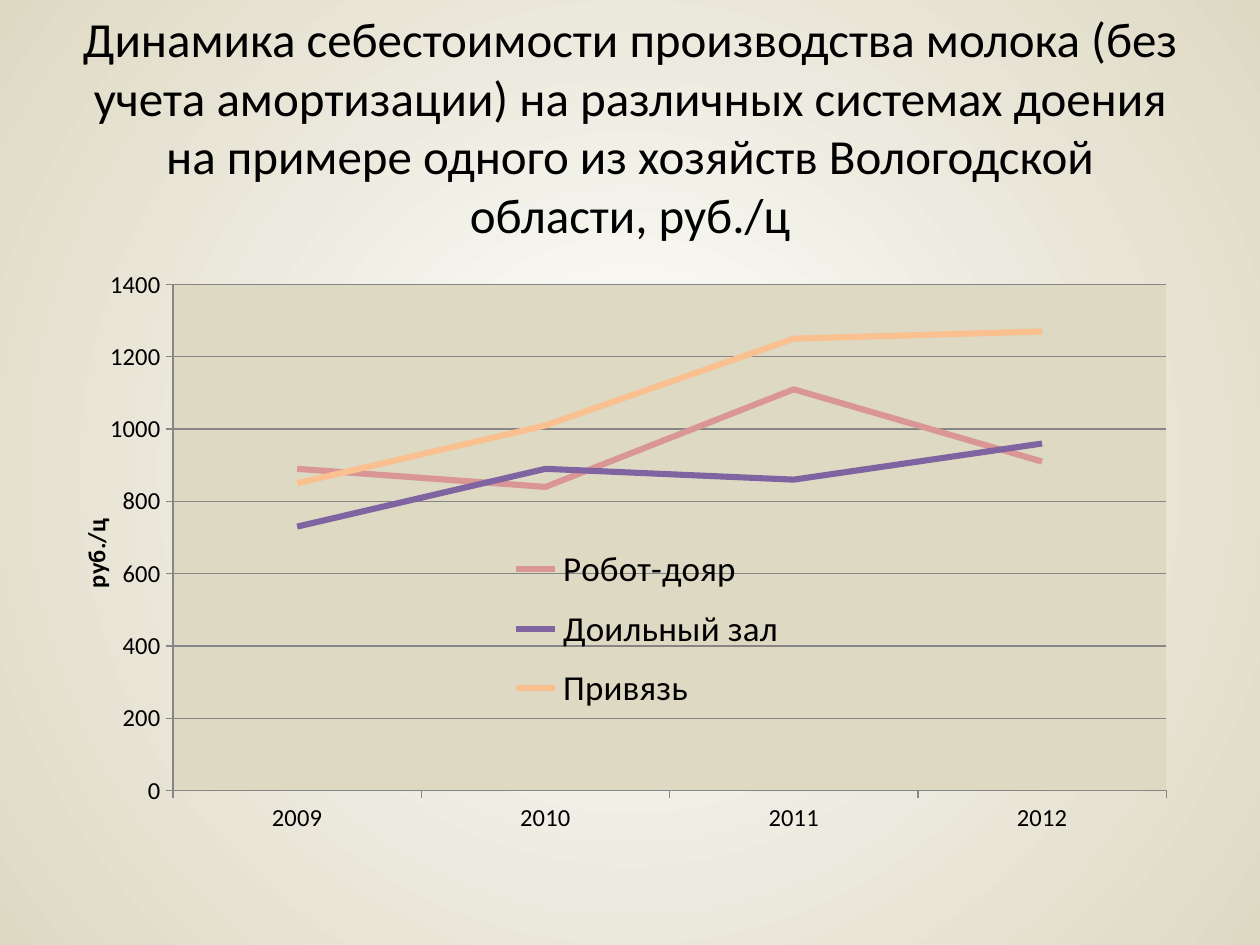
import pptx
import pptx.chart.data
import pptx.dml.color
import pptx.enum.chart
import pptx.enum.text
import pptx.oxml
import pptx.oxml.ns
import pptx.util

Cm, Pt = pptx.util.Cm, pptx.util.Pt
FONT = "Calibri"
HUES = {
    "text": "000000",
    "sand": "DDD9C3",
    "white": "FFFFFF",
    "grid": "868686",
    "robot": "D99694",
    "hall": "8064A2",
    "tied": "FAC090",
}
TITLE = (
    "Динамика себестоимости производства молока (без учета амортизации) "
    "на различных системах доения на примере одного из хозяйств "
    "Вологодской области, руб./ц"
)
YEARS = ["2009", "2010", "2011", "2012"]
COSTS = [
    ("Робот-дояр", "robot", [890, 840, 1110, 910]),
    ("Доильный зал", "hall", [730, 890, 860, 960]),
    ("Привязь", "tied", [850, 1010, 1250, 1270]),
]


def rgb(key):
    return pptx.dml.color.RGBColor.from_string(HUES[key])


def style(font, size, bold=False):
    font.name, font.size, font.bold = FONT, Pt(size), bold
    font.color.rgb = rgb("text")


def parse_xml(tag, body):
    return pptx.oxml.parse_xml(
        f'<{tag} {pptx.oxml.ns.nsdecls("a", "c")}>{body}</{tag}>')


def paint_back(slide):
    fill = slide.background.fill
    fill.gradient()
    for stop, key in zip(fill.gradient_stops, ("white", "sand")):
        stop.color.rgb = rgb(key)
    fill.gradient_stops[0].position = 0
    fill.gradient_stops[1].position = 1
    # Turn the linear gradient into a round one
    lin = slide.element.xpath("p:cSld/p:bg//a:lin")[0]
    rect = '<a:fillToRect l="50000" t="50000" r="50000" b="50000"/>'
    lin.getparent().replace(lin, parse_xml("a:path", rect))
    slide.element.xpath("p:cSld/p:bg//a:path")[0].set("path", "circle")


def add_title(slide):
    box = slide.shapes.add_textbox(Cm(1.27), Cm(0.76), Cm(22.86), Cm(4.57))
    frame = box.text_frame
    frame.word_wrap = True
    frame.vertical_anchor = pptx.enum.text.MSO_ANCHOR.MIDDLE
    frame.margin_bottom = Cm(1.14)
    para = frame.paragraphs[0]
    para.alignment = pptx.enum.text.PP_ALIGN.CENTER
    run = para.add_run()
    run.text = TITLE
    style(run.font, 28)


def place(node, index, inner=False, **spots):
    """Give a chart part a fixed place, in fractions of the chart."""
    for old in node.xpath("c:layout"):
        node.remove(old)
    body = '<c:layoutTarget val="inner"/>' if inner else ""
    body += '<c:xMode val="edge"/><c:yMode val="edge"/>'
    body += "".join(f'<c:{key} val="{val}"/>' for key, val in spots.items())
    layout = f"<c:manualLayout>{body}</c:manualLayout>"
    node.insert(index, parse_xml("c:layout", layout))


def set_axis(axis):
    style(axis.tick_labels.font, 14)
    axis.major_tick_mark = pptx.enum.chart.XL_TICK_MARK.OUTSIDE
    axis.format.line.color.rgb = rgb("grid")
    axis.format.line.width = Pt(0.75)


def set_scale(axis):
    axis.minimum_scale, axis.maximum_scale, axis.major_unit = 0, 1400, 200
    axis.tick_labels.number_format = "0"
    axis.tick_labels.number_format_is_linked = False
    axis.has_major_gridlines = True
    grid = axis.major_gridlines.format.line
    grid.color.rgb, grid.width = rgb("grid"), Pt(0.75)
    run = axis.axis_title.text_frame.paragraphs[0].add_run()
    run.text = "руб./ц"
    style(run.font, 14, True)


def add_chart(slide):
    data = pptx.chart.data.CategoryChartData(number_format="0")
    data.categories = YEARS
    for name, _, vals in COSTS:
        data.add_series(name, vals)
    chart = slide.shapes.add_chart(
        pptx.enum.chart.XL_CHART_TYPE.LINE,
        Cm(1.27), Cm(5.13), Cm(22.86), Cm(11.89), data).chart
    chart.has_title = False
    style(chart.font, 10)

    # Lines
    plot = chart.plots[0]
    plot.vary_by_categories = False
    for line, (_, key, _) in zip(plot.series, COSTS):
        line.smooth = False
        line.format.line.color.rgb = rgb(key)
        line.format.line.width = Pt(3.5)
        line.marker.style = pptx.enum.chart.XL_MARKER_STYLE.NONE

    # Axes and legend
    set_axis(chart.category_axis)
    set_axis(chart.value_axis)
    set_scale(chart.value_axis)
    chart.has_legend = True
    chart.legend.position = pptx.enum.chart.XL_LEGEND_POSITION.RIGHT
    chart.legend.include_in_layout = False
    style(chart.legend.font, 20)

    # Fixed places and the plot fill
    root = chart.element if hasattr(chart, "element") else chart._chartSpace
    area = root.xpath("c:chart/c:plotArea")[0]
    place(area, 0, True, x=0.097, y=0.051, w=0.876, h=0.858)
    area.append(parse_xml(
        "c:spPr", f'<a:solidFill><a:srgbClr val="{HUES["sand"]}"/></a:solidFill>'))
    place(root.xpath("c:chart/c:legend")[0], 1, x=0.39, y=0.47, w=0.25, h=0.33)
    head = root.xpath("c:chart//c:valAx/c:title")[0]
    place(head, 1, x=0.01, y=0.44)
    turn = head.xpath("c:tx/c:rich/a:bodyPr")[0]
    turn.set("rot", "-5400000")
    turn.set("vert", "horz")


def main():
    deck = pptx.Presentation()
    deck.slide_width, deck.slide_height = Cm(25.4), Cm(19.05)
    slide = deck.slides.add_slide(deck.slide_layouts[6])
    paint_back(slide)
    add_title(slide)
    add_chart(slide)
    deck.save("out.pptx")


if __name__ == "__main__":
    main()
